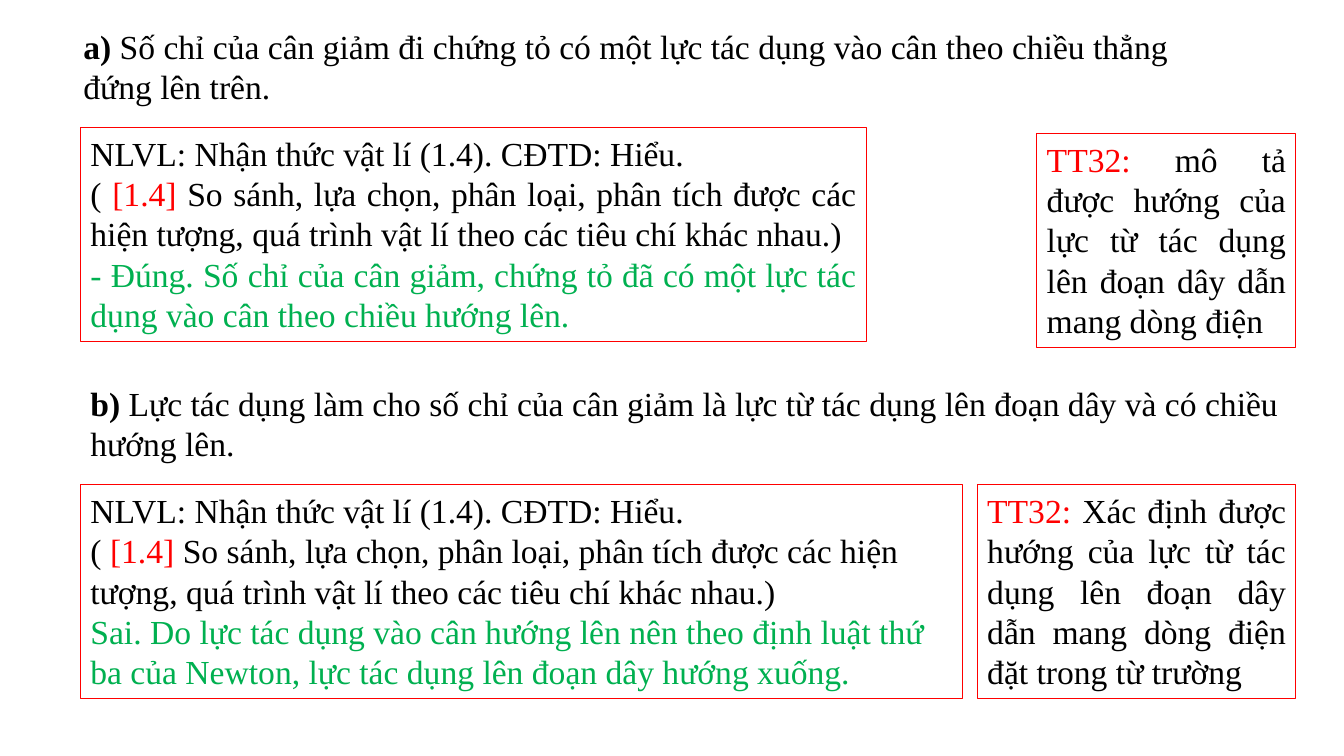
import pptx
import pptx.dml.color
import pptx.enum.text
import pptx.util
from pptx.util import Cm

BLACK, RED, GREEN = "000000", "FF0000", "00B050"
LEFT = pptx.enum.text.PP_ALIGN.LEFT
JUSTIFY = pptx.enum.text.PP_ALIGN.JUSTIFY
BODY_FONT = {"name": "Times New Roman", "size": pptx.util.Pt(24)}
FRAME_FORMAT = {
    "word_wrap": True,
    "auto_size": pptx.enum.text.MSO_AUTO_SIZE.SHAPE_TO_FIT_TEXT,
    "vertical_anchor": pptx.enum.text.MSO_ANCHOR.TOP,
}
COMPETENCE = [
    [("NLVL: Nhận thức vật lí (1.4). CĐTD: Hiểu.", BLACK, False)],
    [
        ("( ", BLACK, False),
        ("[1.4] ", RED, False),
        ("So sánh, lựa chọn, phân loại, phân tích được các hiện tượng, "
         "quá trình vật lí theo các tiêu chí khác nhau.)", BLACK, False),
    ],
]


def rgb(hex_code):
    """Return the colour for a hex string."""
    return pptx.dml.color.RGBColor.from_string(hex_code)


def apply_format(target, values):
    """Set each attribute of the target from a dict."""
    for attribute, value in values.items():
        setattr(target, attribute, value)


def add_passage(slide, box, paragraphs, alignment=LEFT, outlined=False):
    """Write paragraphs of (text, colour, bold) runs in a box in centimetres."""
    passage = slide.shapes.add_textbox(*(Cm(length) for length in box))
    if outlined:
        passage.line.color.rgb = rgb(RED)
        passage.line.width = pptx.util.Pt(0.75)
    frame = passage.text_frame
    apply_format(frame, FRAME_FORMAT)
    for index, pieces in enumerate(paragraphs):
        paragraph = frame.add_paragraph() if index else frame.paragraphs[0]
        paragraph.alignment = alignment
        for text, color, bold in pieces:
            run = paragraph.add_run()
            run.text = text
            apply_format(run.font, {**BODY_FONT, "bold": bold})
            run.font.color.rgb = rgb(color)


def add_question(slide, box, question):
    """Place a statement with its answer and its requirement in the box."""
    left, top, width, height = box
    shift, statement_width = question["statement_span"]
    answer_top = top + 2.7
    answer_height = height - 2.7
    requirement_width = question["requirement_width"]
    add_passage(
        slide, (left + shift, top, statement_width, 2.31),
        [[(question["label"], BLACK, True), (question["statement"], BLACK, False)]],
    )
    add_passage(
        slide, (left, answer_top, question["answer_width"], answer_height),
        COMPETENCE + [[(question["answer"], GREEN, False)]],
        question["answer_alignment"], outlined=True,
    )
    add_passage(
        slide,
        (left + width - requirement_width, answer_top + question["requirement_drop"],
         requirement_width, answer_height),
        [[("TT32: ", RED, False), (question["requirement"], BLACK, False)]],
        JUSTIFY, outlined=True,
    )


def main():
    """Build the slide with its two questions and save it."""
    deck = pptx.Presentation()
    apply_format(deck, {"slide_width": Cm(33.87), "slide_height": Cm(19.05)})
    slide = deck.slides.add_slide(deck.slide_layouts[6])
    questions = [
        {
            "label": "a) ",
            "statement": "Số chỉ của cân giảm đi chứng tỏ có một lực tác dụng "
                         "vào cân theo chiều thẳng đứng lên trên.",
            "statement_span": (-0.18, 29.39),
            "answer": "- Đúng. Số chỉ của cân giảm, chứng tỏ đã có một lực "
                      "tác dụng vào cân theo chiều hướng lên.",
            "answer_width": 19.81,
            "answer_alignment": JUSTIFY,
            "requirement": "mô tả được hướng của lực từ tác dụng lên đoạn dây "
                           "dẫn mang dòng điện",
            "requirement_width": 6.53,
            "requirement_drop": 0.15,
        },
        {
            "label": "b) ",
            "statement": "Lực tác dụng làm cho số chỉ của cân giảm là lực từ "
                         "tác dụng lên đoạn dây và có chiều hướng lên.",
            "statement_span": (0, 30.63),
            "answer": "Sai. Do lực tác dụng vào cân hướng lên nên theo định "
                      "luật thứ ba của Newton, lực tác dụng lên đoạn dây "
                      "hướng xuống.",
            "answer_width": 22.23,
            "answer_alignment": LEFT,
            "requirement": "Xác định được hướng của lực từ tác dụng lên đoạn "
                           "dây dẫn mang dòng điện đặt trong từ trường",
            "requirement_width": 8.03,
            "requirement_drop": 0,
        },
    ]
    for top, question in zip((0.52, 9.52), questions):
        add_question(slide, (2.03, top, 30.63, 8.08), question)
    deck.save("out.pptx")


if __name__ == "__main__":
    main()
